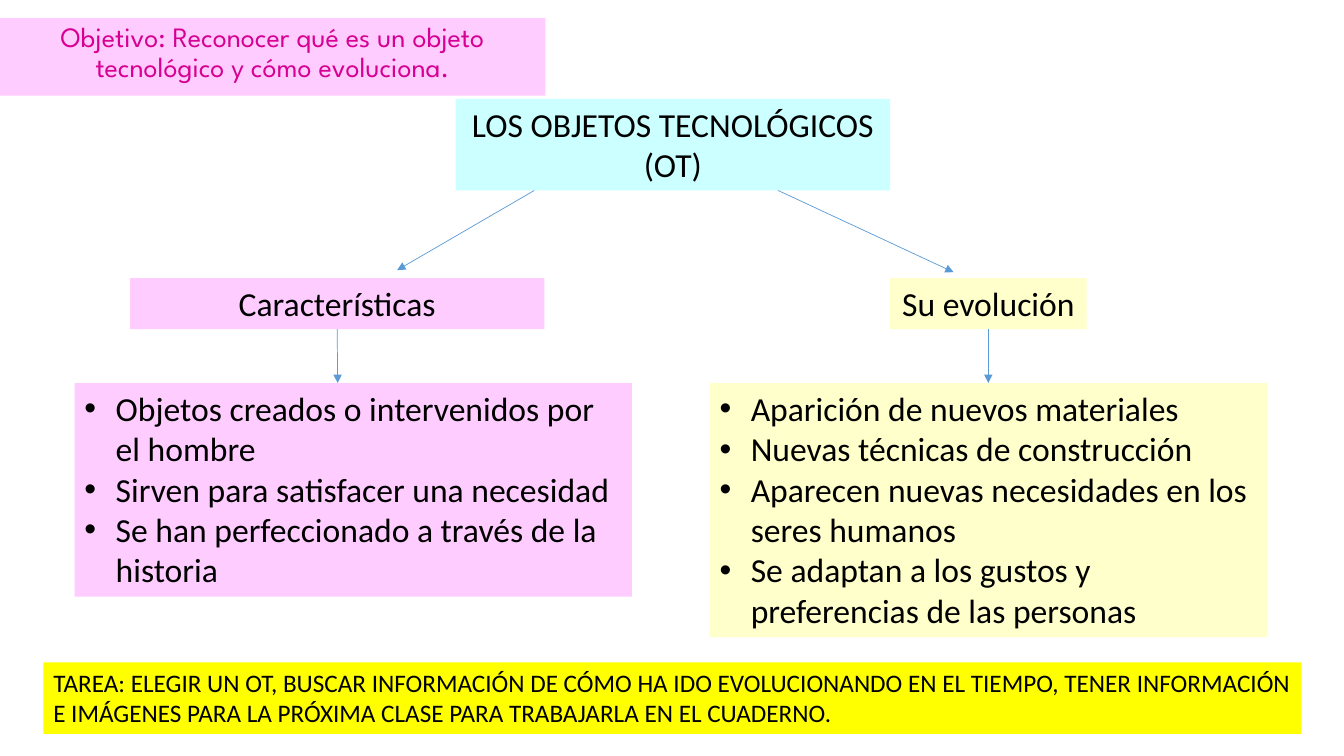
import pptx
import pptx.util
import pptx.dml.color
import pptx.enum.shapes
import pptx.enum.text
import pptx.oxml.ns
import lxml.etree

RGB = pptx.dml.color.RGBColor
PINK = RGB(0xFF, 0xCC, 0xFF)
CREAM = RGB(0xFF, 0xFF, 0xCC)
AQUA = RGB(0xCC, 0xFF, 0xFF)
YELLOW = RGB(0xFF, 0xFF, 0x00)
ROSE = RGB(0xD6, 0x00, 0x93)
BLUE = RGB(0x5B, 0x9B, 0xD5)
BLACK = RGB(0, 0, 0)

Pt = pptx.util.Pt
ALIGN = pptx.enum.text.PP_ALIGN
FIT = pptx.enum.text.MSO_AUTO_SIZE
BOTTOM, TOP = 2, 0


def cells(*counts):
    return [pptx.util.Inches(count / 10) for count in counts]


def add_tag(parent, tag, **attrs):
    return lxml.etree.SubElement(parent, pptx.oxml.ns.qn(tag), attrs)


class Board:
    font = {"name": "Calibri", "size": Pt(24)}
    para = {"alignment": ALIGN.CENTER}
    frame = {"word_wrap": True, "auto_size": FIT.SHAPE_TO_FIT_TEXT}

    def __init__(self, deck):
        self.slide = deck.slides.add_slide(deck.slide_layouts[6])

    def apply(self, target, base, extra=None):
        for key, value in {**base, **(extra or {})}.items():
            setattr(target, key, value)

    def box(self, area, fill, lines, color=BLACK, font=None, para=None,
            frame=None, dots=False):
        shape = self.slide.shapes.add_textbox(*cells(*area))
        shape.fill.solid()
        shape.fill.fore_color.rgb = fill
        text = shape.text_frame
        self.apply(text, self.frame, frame)
        for index, line in enumerate(lines):
            item = text.add_paragraph() if index else text.paragraphs[0]
            if dots:
                self.dot(item)
            self.apply(item, self.para, para)
            run = item.add_run()
            run.text = line
            self.apply(run.font, self.font, font)
            run.font.color.rgb = color
        return shape

    def dot(self, item):
        props = item._p.get_or_add_pPr()
        indent = int(pptx.util.Inches(0.31))
        props.set("marL", str(indent))
        props.set("indent", str(-indent))
        add_tag(props, "a:buFont", typeface="Arial")
        add_tag(props, "a:buChar", char="•")

    def list(self, area, fill, lines):
        return self.box(area, fill, lines, para={"alignment": ALIGN.LEFT},
                        dots=True)

    def arrow(self, ends, start=None, stop=None):
        kind = pptx.enum.shapes.MSO_CONNECTOR.STRAIGHT
        link = self.slide.shapes.add_connector(kind, *cells(*ends))
        if start:
            link.begin_connect(start, BOTTOM)
        if stop:
            link.end_connect(stop, TOP)
        link.line.color.rgb = BLUE
        link.line.width = Pt(0.5)
        add_tag(link.line._get_or_add_ln(), "a:tailEnd", type="triangle")
        add_tag(link._element.spPr, "a:effectLst")


def main():
    deck = pptx.Presentation()
    deck.slide_width, deck.slide_height = cells(133.33, 75)
    board = Board(deck)

    board.box((45.2, 9.8, 43.1, 9.1), AQUA, ["LOS OBJETOS TECNOLÓGICOS (OT)"])
    board.list((7.4, 38, 55.3, 21.2), PINK, [
        "Objetos creados o intervenidos por el hombre",
        "Sirven para satisfacer una necesidad",
        "Se han perfeccionado a través de la historia",
    ])
    gains = board.list((70.4, 38, 55.3, 25.2), CREAM, [
        "Aparición de nuevos materiales",
        "Nuevas técnicas de construcción",
        "Aparecen nuevas necesidades en los seres humanos",
        "Se adaptan a los gustos y preferencias de las personas",
    ])
    growth = board.box((88.3, 27.6, 19.5, 5.05), CREAM, ["Su evolución"])
    traits = board.box((12.9, 27.6, 41.1, 5.05), PINK, ["Características"])

    board.arrow((53, 18.9, 39.4, 26.8))
    board.arrow((77.2, 18.9, 94.6, 27))
    board.arrow((33.5, 32.7, 33.5, 38), traits)
    board.arrow((98.1, 32.7, 98.1, 38), growth, gains)

    board.box((4.3, 65.7, 124.8, 7.1), YELLOW, [
        "TAREA: ELEGIR UN OT, BUSCAR INFORMACIÓN DE CÓMO HA IDO EVOLUCIONANDO "
        "EN EL TIEMPO, TENER INFORMACIÓN E IMÁGENES PARA LA PRÓXIMA CLASE "
        "PARA TRABAJARLA EN EL CUADERNO.",
    ], font={"size": Pt(18)}, para={"alignment": ALIGN.LEFT})
    board.box((0, 1.8, 54.1, 7.7), PINK, [
        "Objetivo: Reconocer qué es un objeto tecnológico y cómo evoluciona.",
    ], ROSE, {"name": "League Spartan", "size": Pt(20)},
        {"line_spacing": 0.9}, {"auto_size": FIT.NONE})

    deck.save("out.pptx")


if __name__ == "__main__":
    main()
